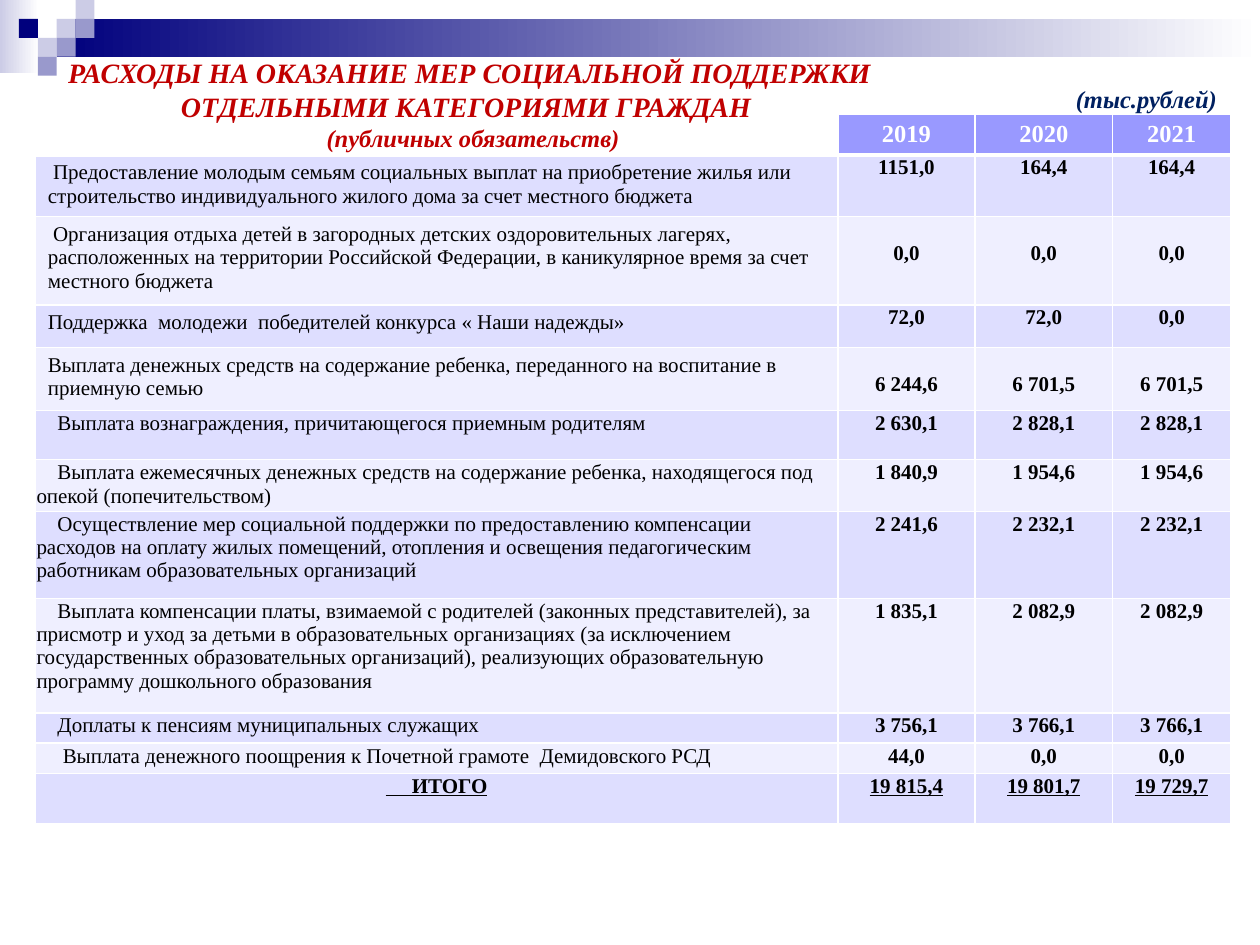
import lxml.etree
import pptx
import pptx.dml.color
import pptx.enum.shapes
import pptx.enum.text
import pptx.oxml.ns
import pptx.util

FONT = "Times New Roman"
STEP = 0.15
SQUARES = [(3, 1, "CCCCE6"), (4, 0, "CCCCE6"), (4, 1, "9999CC"), (2, 2, "CCCCE6"),
           (1, 1, "00007D"), (3, 2, "9999CC"), (2, 3, "9999CC")]
TITLE = [("РАСХОДЫ НА ОКАЗАНИЕ МЕР СОЦИАЛЬНОЙ ПОДДЕРЖКИ ", 16),
         ("ОТДЕЛЬНЫМИ КАТЕГОРИЯМИ ГРАЖДАН  ", 16),
         ("(публичных обязательств)", 14)]
COLUMNS = [6.37, 1.09, 1.09, 0.94]
YEARS = ["2019", "2020", "2021"]
HEADER_HEIGHT = 0.32
WIDE, TIGHT, LOWERED = (0.1, 0.05), (0.01, 0.01), (0.01, 0.2)
ROWS = [
    (0.49, WIDE, 3, TIGHT,
     "Предоставление молодым семьям социальных выплат на приобретение жилья или "
     "строительство индивидуального жилого дома за счет местного бюджета",
     ["1151,0", "164,4", "164,4"]),
    (0.7, WIDE, 3, LOWERED,
     "Организация отдыха детей в загородных детских оздоровительных лагерях, "
     "расположенных на территории Российской Федерации, в каникулярное время за счет "
     "местного бюджета",
     ["0,0", "0,0", "0,0"]),
    (0.34, WIDE, 0, TIGHT,
     "Поддержка  молодежи  победителей конкурса « Наши надежды»",
     ["72,0", "72,0", "0,0"]),
    (0.5, WIDE, 0, LOWERED,
     "Выплата денежных средств на содержание ребенка, переданного на воспитание в "
     "приемную семью",
     ["6 244,6", "6 701,5", "6 701,5"]),
    (0.39, TIGHT, 12, TIGHT,
     "Выплата вознаграждения, причитающегося приемным родителям",
     ["2 630,1", "2 828,1", "2 828,1"]),
    (0.41, TIGHT, 12, TIGHT,
     "Выплата ежемесячных денежных средств на содержание ребенка, находящегося под "
     "опекой (попечительством)",
     ["1 840,9", "1 954,6", "1 954,6"]),
    (0.69, TIGHT, 12, TIGHT,
     "Осуществление мер социальной поддержки по предоставлению компенсации расходов на "
     "оплату жилых помещений, отопления и освещения педагогическим работникам "
     "образовательных организаций",
     ["2 241,6", "2 232,1", "2 232,1"]),
    (0.91, TIGHT, 12, TIGHT,
     "Выплата компенсации платы, взимаемой с родителей (законных представителей), за "
     "присмотр и уход за детьми в образовательных организациях (за исключением "
     "государственных образовательных организаций), реализующих образовательную "
     "программу дошкольного образования",
     ["1 835,1", "2 082,9", "2 082,9"]),
    (0.24, TIGHT, 12, TIGHT, "Доплаты к пенсиям муниципальных служащих",
     ["3 756,1", "3 766,1", "3 766,1"]),
    (0.24, TIGHT, 15, TIGHT,
     "Выплата денежного поощрения к Почетной грамоте  Демидовского РСД",
     ["44,0", "0,0", "0,0"]),
    (0.4, TIGHT, 0, TIGHT, "     ИТОГО", ["19 815,4", "19 801,7", "19 729,7"]),
]


def inches(*values):
    return [pptx.util.Inches(v) for v in values]


def rgb(value):
    return pptx.dml.color.RGBColor.from_string(value)


def style(p, size, color, bold=True, italic=False, underline=None, center=True):
    align = pptx.enum.text.PP_ALIGN
    p.alignment = align.CENTER if center else align.LEFT
    for r in p.runs:
        r.font.name, r.font.size = FONT, pptx.util.Pt(size)
        r.font.bold, r.font.italic, r.font.underline = bold, italic, underline
        r.font.color.rgb = rgb(color)


def add_block(s, box, *colors):
    sp = s.shapes.add_shape(pptx.enum.shapes.MSO_SHAPE.RECTANGLE, *inches(*box))
    sp.shadow.inherit = False
    sp.line.fill.background()
    if len(colors) == 1:
        sp.fill.solid()
        sp.fill.fore_color.rgb = rgb(colors[0])
        return
    sp.fill.gradient()
    sp.fill.gradient_angle = 0
    for position, (stop, color) in enumerate(zip(sp.fill.gradient_stops, colors)):
        stop.position = position
        stop.color.rgb = rgb(color)


def add_ornament(s):
    add_block(s, (0, 0, 0.31, 0.58), "CCCCE6", "FFFFFF")
    add_block(s, (3 * STEP, STEP, 10 - 3 * STEP, 2 * STEP), "00007D", "FFFFFF")
    for col, row, color in SQUARES:
        add_block(s, (col * STEP, row * STEP, STEP, STEP), color)


def set_borders(cell, bottom=1, top=1):
    tcPr = cell._tc.get_or_add_tcPr()
    for side, width in (("L", 1), ("R", 1), ("T", top), ("B", bottom)):
        ln = lxml.etree.SubElement(tcPr, pptx.oxml.ns.qn("a:ln" + side),
                                   w=str(pptx.util.Pt(width)))
        fill = lxml.etree.SubElement(ln, pptx.oxml.ns.qn("a:solidFill"))
        lxml.etree.SubElement(fill, pptx.oxml.ns.qn("a:srgbClr"), val="FFFFFF")


def fill_cell(cell, text, band, margins, **font):
    side, top = inches(*margins)
    cell.margin_left = cell.margin_right = side
    cell.margin_top = top
    cell.margin_bottom = top if margins == WIDE else 0
    cell.fill.solid()
    cell.fill.fore_color.rgb = rgb(band)
    p = cell.text_frame.paragraphs[0]
    p.text = text
    style(p, **font)
    return p


def add_expense_table(s):
    height = HEADER_HEIGHT + sum(row[0] for row in ROWS)
    frame = s.shapes.add_table(len(ROWS) + 1, len(COLUMNS),
                               *inches(0.28, 0.91, sum(COLUMNS), height))
    table = frame.table
    table.first_row = table.horz_banding = False
    for column, width in zip(table.columns, COLUMNS):
        column.width = pptx.util.Inches(width)
    table.rows[0].height = pptx.util.Inches(HEADER_HEIGHT)
    for col in range(len(COLUMNS)):
        set_borders(table.cell(0, col), bottom=3)
    corner = table.cell(0, 0)
    corner.margin_top = corner.margin_bottom = 0
    corner.fill.background()
    for col, year in enumerate(YEARS, 1):
        fill_cell(table.cell(0, col), year, "9999FF", WIDE, size=14, color="FFFFFF")
    for i, (height, label_margins, indent, value_margins, label, values) in enumerate(ROWS, 1):
        table.rows[i].height = pptx.util.Inches(height)
        total = i == len(ROWS)
        band = "DEDEFF" if i % 2 else "EFEFFF"
        for col, text in enumerate([label] + values):
            cell = table.cell(i, col)
            set_borders(cell, top=3 if i == 1 else 1)
            p = fill_cell(cell, text, band, value_margins if col else label_margins,
                          size=12, color="000000", bold=col > 0 or total,
                          underline=total or None, center=col > 0 or total)
            if indent and col == 0:
                pPr = p._p.get_or_add_pPr()
                pPr.set("marL", "0")
                pPr.set("indent", str(pptx.util.Pt(indent)))


def format_title(s):
    title = s.shapes.title
    title.left, title.top, title.width, title.height = inches(0.16, 0.39, 7.19, 0.88)
    tf = title.text_frame
    tf.auto_size = pptx.enum.text.MSO_AUTO_SIZE.NONE
    tf.vertical_anchor = pptx.enum.text.MSO_ANCHOR.TOP
    tf.text = "\n".join(text for text, size in TITLE)
    for p, (text, size) in zip(tf.paragraphs, TITLE):
        style(p, size, "C00000", italic=True)
    title.element.getparent().append(title.element)


def add_unit(s):
    tf = s.shapes.add_textbox(*inches(8.44, 0.62, 1.33, 0.34)).text_frame
    tf.word_wrap = False
    tf.text = "(тыс.рублей)"
    style(tf.paragraphs[0], 14, "002060", italic=True, center=False)


def main():
    prs = pptx.Presentation()
    prs.slide_width, prs.slide_height = inches(10, 7.5)
    s = prs.slides.add_slide(prs.slide_layouts[5])
    add_ornament(s)
    add_expense_table(s)
    format_title(s)
    add_unit(s)
    prs.save("out.pptx")


if __name__ == "__main__":
    main()
